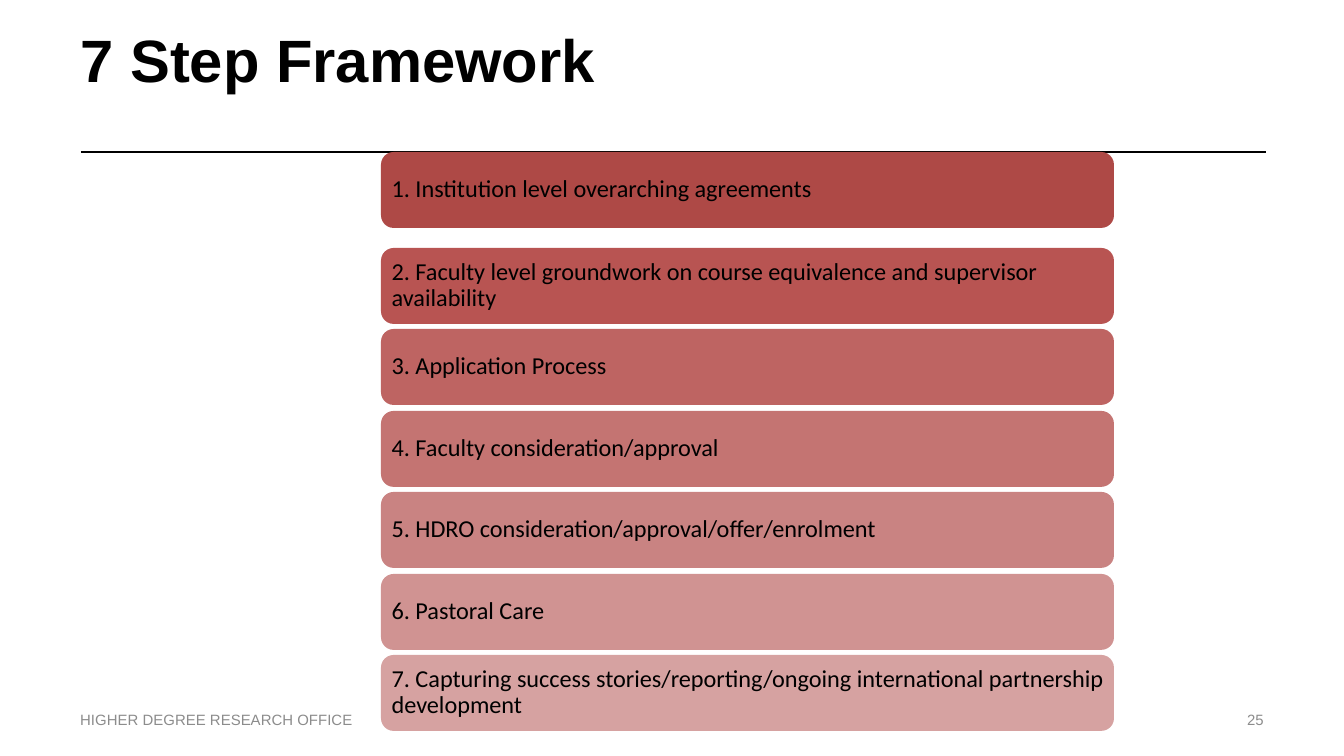
from lxml import etree
from pptx import Presentation
from pptx.dml.color import RGBColor
from pptx.enum.shapes import MSO_CONNECTOR, MSO_SHAPE
from pptx.enum.text import MSO_ANCHOR, PP_ALIGN
from pptx.oxml.ns import qn
from pptx.util import Emu, Pt

PX_PER_INCH = 134.4
STRAIGHT = MSO_CONNECTOR.STRAIGHT
ROUNDED = MSO_SHAPE.ROUNDED_RECTANGLE
MIDDLE, BOTTOM = MSO_ANCHOR.MIDDLE, MSO_ANCHOR.BOTTOM
LEFT, RIGHT = PP_ALIGN.LEFT, PP_ALIGN.RIGHT

BLACK = RGBColor(0x00, 0x00, 0x00)
GREY = RGBColor(0x8C, 0x8C, 0x8C)
RED_1 = RGBColor(0xAE, 0x49, 0x46)
RED_2 = RGBColor(0xB8, 0x54, 0x52)
RED_3 = RGBColor(0xBE, 0x64, 0x62)
RED_4 = RGBColor(0xC4, 0x74, 0x72)
RED_5 = RGBColor(0xC9, 0x83, 0x82)
RED_6 = RGBColor(0xD0, 0x93, 0x92)
RED_7 = RGBColor(0xD6, 0xA2, 0xA1)

STEPS = [
    ("Institution level overarching agreements", RED_1),
    ("Faculty level groundwork on course equivalence and supervisor availability", RED_2),
    ("Application Process", RED_3),
    ("Faculty consideration/approval", RED_4),
    ("HDRO consideration/approval/offer/enrolment", RED_5),
    ("Pastoral Care", RED_6),
    ("Capturing success stories/reporting/ongoing international partnership development", RED_7),
]
STEP_LEFT, STEP_WIDTH, STEP_HEIGHT = 381, 733, 76
FIRST_TOP, SECOND_TOP, PITCH = 152, 248, 81.5
STEP_INSET = 7


def px(length):
    """Turn pixels into EMU."""
    return Emu(round(length * 914400 / PX_PER_INCH))


def write_text(shape, text, size, font="Arial", color=BLACK, bold=False,
               align=LEFT, anchor=MIDDLE, inset=None, line_spacing=None):
    """Put one formatted paragraph into a shape."""
    frame = shape.text_frame
    frame.word_wrap = True
    frame.vertical_anchor = anchor
    if inset is not None:
        frame.margin_left = frame.margin_right = px(inset)
        frame.margin_top = frame.margin_bottom = px(inset)
    paragraph = frame.paragraphs[0]
    paragraph.alignment = align
    if line_spacing:
        paragraph.line_spacing = line_spacing
    run = paragraph.add_run()
    run.text = text
    run.font.name = font
    run.font.size = Pt(size)
    run.font.bold = bold
    run.font.color.rgb = color


def add_rule(slide, left, right, top):
    """Draw the horizontal line under the title."""
    rule = slide.shapes.add_connector(STRAIGHT, px(left), px(top), px(right), px(top))
    rule.line.color.rgb = BLACK
    rule.line.width = Pt(1)
    etree.SubElement(rule._element.spPr, qn("a:effectLst"))


def place_title(slide, text):
    """Position and fill the title placeholder."""
    title = slide.shapes.title
    title.left, title.top = px(67), px(0)
    title.width, title.height = px(941), px(101)
    write_text(title, text, 32, bold=True, anchor=BOTTOM)


def add_footer(slide, text, left, align):
    """Add a small grey text at the foot of the slide."""
    box = slide.shapes.add_textbox(px(left), px(700), px(313), px(40))
    write_text(box, text, 8, color=GREY, align=align)


def add_step(slide, text, top, color):
    """Add one rounded bar with its step text."""
    bar = slide.shapes.add_shape(ROUNDED, px(STEP_LEFT), px(top),
                                 px(STEP_WIDTH), px(STEP_HEIGHT))
    bar.shadow.inherit = False
    bar.fill.solid()
    bar.fill.fore_color.rgb = color
    bar.line.fill.background()
    write_text(bar, text, 13, font="Calibri", inset=STEP_INSET, line_spacing=0.9)


def main():
    """Build the slide and save it."""
    presentation = Presentation()
    presentation.slide_width, presentation.slide_height = px(1344), px(756)
    slide = presentation.slides.add_slide(presentation.slide_layouts[5])
    add_rule(slide, 81, 1266, 152)
    place_title(slide, "7 Step Framework")
    add_footer(slide, "25", 964, RIGHT)
    add_footer(slide, "HIGHER DEGREE RESEARCH OFFICE", 67, LEFT)
    for index, (text, color) in enumerate(STEPS):
        top = SECOND_TOP + int(PITCH * (index - 1)) if index else FIRST_TOP
        add_step(slide, f"{index + 1}. {text}", top, color)
    presentation.save("out.pptx")


if __name__ == "__main__":
    main()
